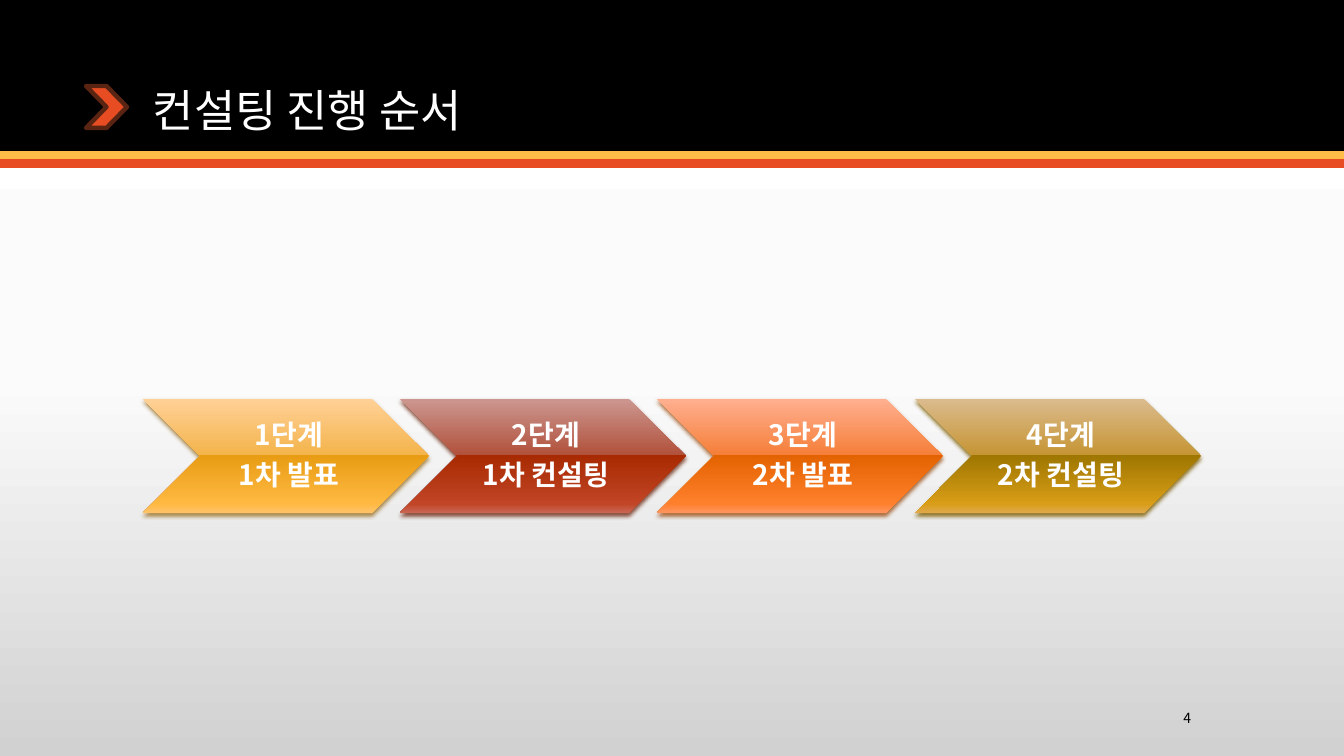
from lxml.etree import SubElement
from pptx import Presentation
from pptx.dml.color import RGBColor
from pptx.enum.shapes import MSO_SHAPE
from pptx.enum.text import MSO_ANCHOR, PP_ALIGN
from pptx.oxml.ns import qn
from pptx.util import Emu, Pt

FONT = "Noto Sans CJK KR"
WIDE, HIGH = 1344, 756
SCALE = 12192000 / WIDE
STEPS = [
    ("1단계\n1차 발표", ["FFD197", "F4B44C", "E89C13", "FFB942", "FFC36A"], "9D752C"),
    ("2단계\n1차 컨설팅", ["CC9790", "B1513C", "A82A02", "C14526", "C96654"], "702D17"),
    ("3단계\n2차 발표", ["FFAF90", "F57F39", "E36200", "FF802C", "FF945E"], "9D5218"),
    ("4단계\n2차 컨설팅", ["DBBB8E", "C69534", "9D7600", "D99D17", "DFA94C"], "7E5E00"),
]


def px(size):
    return Emu(round(size * SCALE))


def paint(color, code):
    color.rgb = RGBColor.from_string(code)


def fade(owner, stops):
    solid = owner.find(qn("a:solidFill"))
    grad = solid.makeelement(qn("a:gradFill"), {"rotWithShape": "1"})
    items = SubElement(grad, qn("a:gsLst"))
    for spot, code in stops:
        stop = SubElement(items, qn("a:gs"), pos=str(spot * 1000))
        SubElement(stop, qn("a:srgbClr"), val=code)
    SubElement(grad, qn("a:lin"), ang="5400000", scaled="0")
    owner.replace(solid, grad)


def shade(shape, code):
    effects = shape._element.spPr.find(qn("a:effectLst"))
    outer = SubElement(effects, qn("a:outerShdw"), blurRad=str(Pt(3.1)),
                       dist=str(Pt(2)), dir="5400000", rotWithShape="0")
    color = SubElement(outer, qn("a:srgbClr"), val=code)
    SubElement(color, qn("a:alpha"), val="83000")


def write(frame, text, size, code, align, anchor, bold=False, lead=0.9, after=0):
    frame.word_wrap = True
    frame.vertical_anchor = anchor
    frame.text = text
    for para in frame.paragraphs:
        para.alignment = align
        para.line_spacing = lead
        para.space_after = Pt(after)
        for run in para.runs:
            run.font.size = Pt(size)
            run.font.bold = bold
            run.font.name = FONT
            paint(run.font.color, code)
            SubElement(run._r.get_or_add_rPr(), qn("a:ea"), typeface=FONT)


def block(slide, kind, box, code):
    shape = slide.shapes.add_shape(kind, *map(px, box))
    shape.shadow.inherit = False
    shape.fill.solid()
    paint(shape.fill.fore_color, code)
    shape.line.fill.background()
    return shape


def label(slide, box, *style):
    frame = slide.shapes.add_textbox(*map(px, box)).text_frame
    write(frame, *style)


def step(slide, left, text, codes, dark):
    arrow = block(slide, MSO_SHAPE.CHEVRON, (left, 399, 286, 114), codes[0])
    fade(arrow._element.spPr, zip([0, 49, 49, 92, 100], codes))
    shade(arrow, dark)
    frame = arrow.text_frame
    frame.margin_left = px(9)
    frame.margin_right = frame.margin_top = frame.margin_bottom = px(3)
    write(frame, text, 20, "FFFFFF", PP_ALIGN.CENTER, MSO_ANCHOR.MIDDLE, True, 0.9, 7)


def main():
    deck = Presentation()
    deck.slide_width, deck.slide_height = px(WIDE), px(HIGH)
    slide = deck.slides.add_slide(deck.slide_layouts[6])
    slide.background.fill.solid()
    fade(slide._element.cSld.find(qn("p:bg")).find(qn("p:bgPr")),
         [(0, "FFFFFF"), (50, "FBFBFB"), (100, "D1D1D1")])

    for top, tall, code in [(0, 151, "000000"), (151, 9, "FFBD47"), (159, 9, "E84C22")]:
        block(slide, MSO_SHAPE.RECTANGLE, (0, top, WIDE, tall), code)
    mark = block(slide, MSO_SHAPE.CHEVRON, (86, 86, 41, 42), "E84C22")
    paint(mark.line.color, "5A2413")
    mark.line.width = Pt(3.15)
    label(slide, (143, 28, 1058, 114), "컨설팅 진행 순서", 32, "FFFFFF",
          PP_ALIGN.LEFT, MSO_ANCHOR.BOTTOM)

    for i, (text, codes, dark) in enumerate(STEPS):
        step(slide, 143 + i * 772 // 3, text, codes, dark)
    label(slide, (1050, 703, 151, 30), "4", 10, "000000",
          PP_ALIGN.RIGHT, MSO_ANCHOR.MIDDLE, False, 1.0)
    deck.save("out.pptx")


if __name__ == "__main__":
    main()
